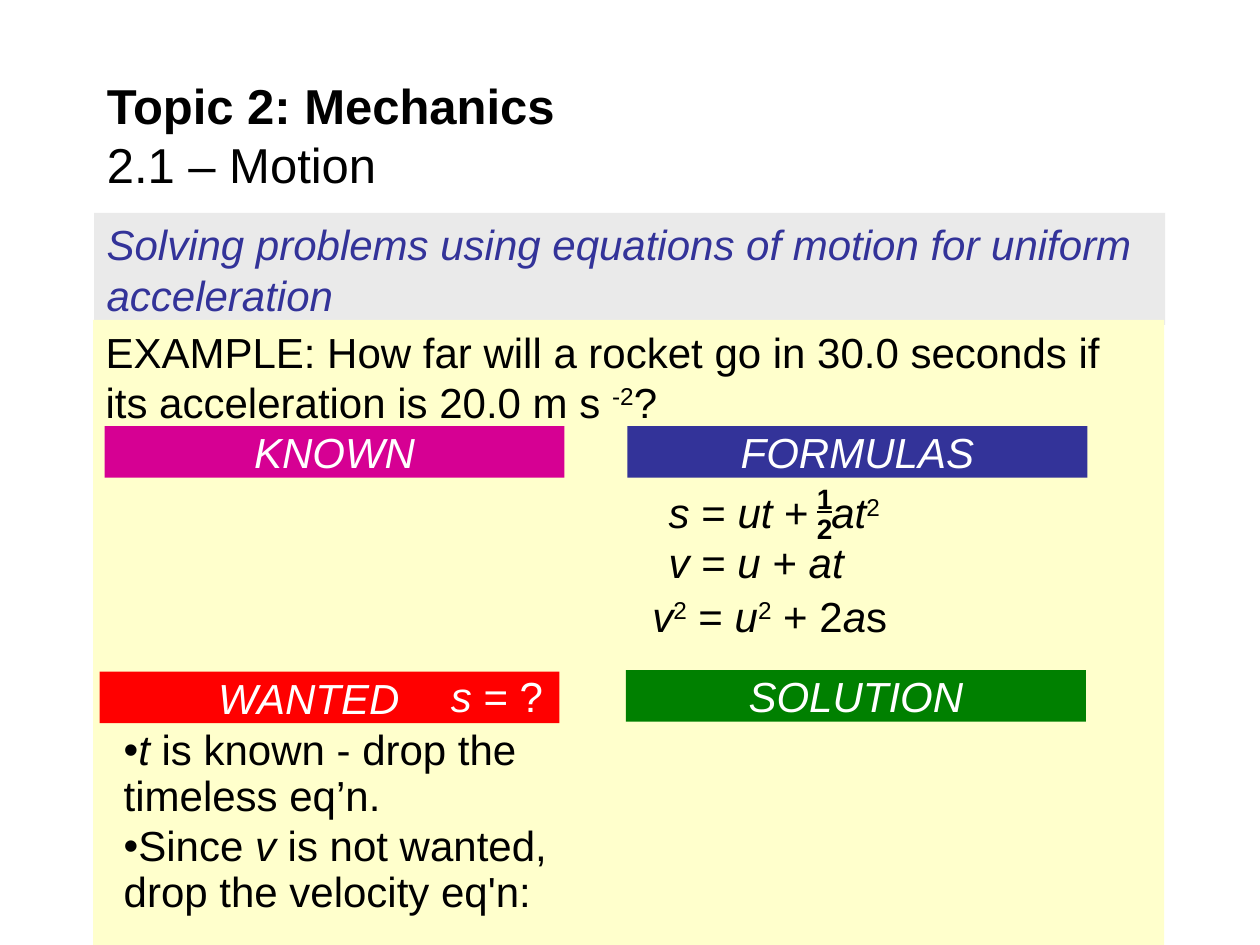
"""Build the physics slide on solving uniform acceleration problems."""
from dataclasses import dataclass

from lxml.etree import SubElement
from pptx import Presentation
from pptx.dml.color import RGBColor
from pptx.enum.shapes import MSO_SHAPE as Shape
from pptx.enum.text import MSO_ANCHOR as Anchor
from pptx.enum.text import MSO_AUTO_SIZE as Fit
from pptx.enum.text import PP_ALIGN as Align
from pptx.oxml.ns import qn
from pptx.util import Cm, Pt

BLACK = RGBColor(0x00, 0x00, 0x00)
WHITE = RGBColor(0xFF, 0xFF, 0xFF)
GREY = RGBColor(0xEA, 0xEA, 0xEA)
CREAM = RGBColor(0xFF, 0xFF, 0xCC)
BLUE = RGBColor(0x33, 0x33, 0x99)
PINK = RGBColor(0xD6, 0x00, 0x93)
RED = RGBColor(0xFF, 0x00, 0x00)
GREEN = RGBColor(0x00, 0x80, 0x00)


@dataclass(frozen=True)
class Box:
    left: float
    top: float
    width: float
    height: float


@dataclass(frozen=True)
class Label:
    text: str
    left: float
    top: float
    fill: RGBColor
    align: Align = Align.CENTER
    inset: float = 0.25


@dataclass(frozen=True)
class Formula:
    text: str
    box: Box
    tab: float = 0


LABELS = (
    Label("KNOWN", 2.11, 8.59, PINK),
    Label("WANTED", 2.01, 13.54, RED, Align.LEFT, 2.39),
    Label("FORMULAS", 12.65, 8.59, BLUE),
    Label("SOLUTION", 12.62, 13.51, GREEN),
)
FORMULAS = (
    Formula("*s *= *ut* +\t*at*^2^", Box(13.23, 9.8, 8.74, 0.89), 3.28),
    Formula("*v* = *u *+ *at*", Box(13.23, 10.8, 5.38, 0.99)),
    Formula("*v*^2^ = *u*^2^ + 2*a*s", Box(12.9, 11.89, 8.23, 1.09)),
)
RULES = (
    "*t* is known - drop the timeless eq’n.",
    "Since *v* is not wanted, drop the velocity eq'n:",
)


def place(shape, box: Box) -> None:
    """Move a shape into a box."""
    shape.left, shape.top = Cm(box.left), Cm(box.top)
    shape.width, shape.height = Cm(box.width), Cm(box.height)


def write(para, text: str, *, size=24, color=BLACK, bold=False, italic=False,
          under=False, align=Align.LEFT, line=0.9, before=3) -> None:
    """Fill a paragraph, where * toggles italic and ^ toggles superscript."""
    para.alignment, para.line_spacing = align, line
    para.space_before, para.space_after = Pt(before), Pt(0)
    for i, slab in enumerate(text.split("*")):
        for j, part in enumerate(slab.split("^")):
            if not part:
                continue
            run = para.add_run()
            run.text = part
            font = run.font
            font.name, font.size, font.bold = "Arial", Pt(size), bold
            font.italic = italic != (i % 2 == 1)
            font.underline = under
            font.color.rgb = color
            if j % 2:
                run._r.get_or_add_rPr().set("baseline", "30000")


def set_frame(shape, anchor=Anchor.TOP):
    """Wrap the text of a shape at a fixed size."""
    frame = shape.text_frame
    frame.word_wrap, frame.auto_size = True, Fit.NONE
    frame.vertical_anchor = anchor
    return frame


def add_panel(slide, box: Box, fill: RGBColor):
    """Add a plain filled rectangle and return its text frame."""
    shape = slide.shapes.add_shape(
        Shape.RECTANGLE, Cm(box.left), Cm(box.top), Cm(box.width), Cm(box.height))
    shape.shadow.inherit = False
    shape.fill.solid()
    shape.fill.fore_color.rgb = fill
    shape.line.fill.background()
    return set_frame(shape)


def add_text(slide, box: Box):
    """Add a text box and return its frame."""
    return set_frame(slide.shapes.add_textbox(
        Cm(box.left), Cm(box.top), Cm(box.width), Cm(box.height)))


def add_label(slide, label: Label) -> None:
    """Add a coloured heading bar."""
    frame = add_panel(slide, Box(label.left, label.top, 9.27, 1.04), label.fill)
    frame.margin_left = Cm(label.inset)
    write(frame.paragraphs[0], label.text, color=WHITE, italic=True,
          align=label.align)


def add_formula(slide, item: Formula) -> None:
    """Add one formula, with a tab stop where a fraction fits in."""
    para = add_text(slide, item.box).paragraphs[0]
    write(para, item.text)
    if item.tab:
        stops = SubElement(para._p.get_or_add_pPr(), qn("a:tabLst"))
        SubElement(stops, qn("a:tab"), pos=str(Cm(item.tab)), algn="l")


def add_rules(body) -> None:
    """Fill the body with the bulleted rules."""
    place(body, Box(2.24, 14.58, 9.96, 4.17))
    frame = set_frame(body)
    for i, text in enumerate(RULES):
        para = frame.add_paragraph() if i else frame.paragraphs[0]
        write(para, text)
        props = para._p.get_or_add_pPr()
        props.set("marL", "0")
        props.set("indent", "0")
        SubElement(props, qn("a:buFont"), typeface="Arial")
        SubElement(props, qn("a:buChar"), char="•")


def main() -> None:
    """Build and save the deck."""
    deck = Presentation()
    deck.slide_width, deck.slide_height = Cm(25.4), Cm(19.05)
    slide = deck.slides.add_slide(deck.slide_layouts[1])
    title, body = slide.placeholders

    place(title, Box(1.9, 1.47, 21.59, 2.49))
    para = set_frame(title, Anchor.MIDDLE).paragraphs[0]
    write(para, "Topic 2: Mechanics", size=28, bold=True, line=1.0, before=0)
    para.add_line_break()
    write(para, "2.1 – Motion", size=28, line=1.0, before=0)

    head = add_panel(slide, Box(1.9, 4.29, 21.59, 2.26), GREY)
    write(head.paragraphs[0], "Solving problems using equations of motion "
          "for uniform acceleration", color=BLUE, italic=True, line=1.0)
    task = add_panel(slide, Box(1.88, 6.45, 21.59, 12.6), CREAM)
    write(task.paragraphs[0], "EXAMPLE: How far will a rocket go in 30.0 seconds "
          "if its acceleration is 20.0 m s ^-2^?", line=1.0)

    for label in LABELS:
        add_label(slide, label)
    goal = add_text(slide, Box(8.18, 13.51, 3.02, 1.04))
    write(goal.paragraphs[0], "*s* = ?", color=WHITE, align=Align.RIGHT)
    for item in FORMULAS:
        add_formula(slide, item)

    half = add_text(slide, Box(16.18, 9.65, 0.89, 1.17))
    write(half.paragraphs[0], "1", size=16, bold=True, under=True,
          align=Align.CENTER, before=0)
    write(half.add_paragraph(), "2", size=16, bold=True,
          align=Align.CENTER, before=0)

    add_rules(body)
    slide.shapes._spTree.append(body._element)
    deck.save("out.pptx")


if __name__ == "__main__":
    main()
